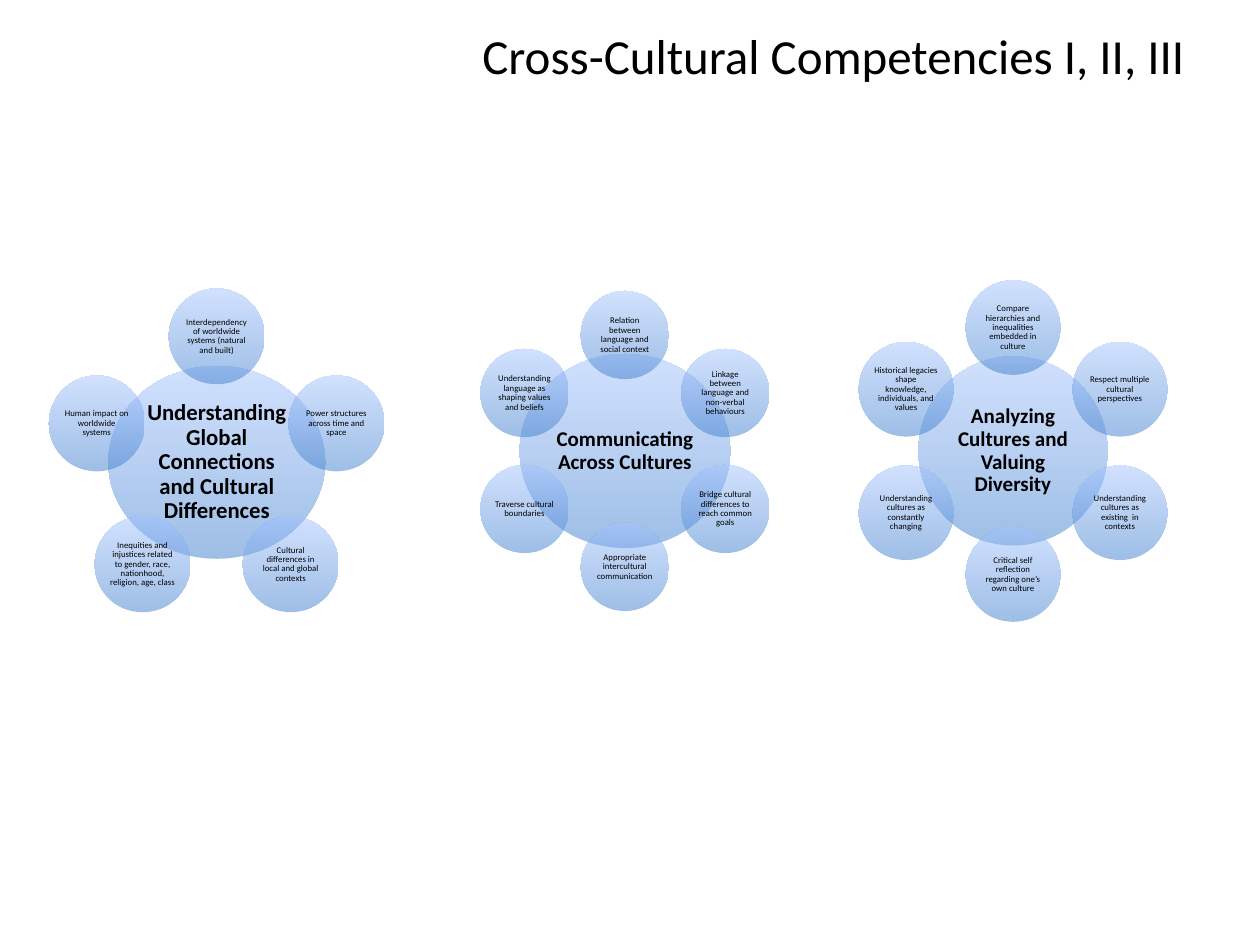
"""Build a slide of three radial clusters on cross-cultural skills."""
from dataclasses import dataclass
from math import cos, pi, sin

from lxml.etree import SubElement
from pptx import Presentation
from pptx.dml.color import RGBColor
from pptx.enum.shapes import MSO_SHAPE
from pptx.enum.text import MSO_ANCHOR, MSO_AUTO_SIZE, PP_ALIGN
from pptx.oxml.ns import qn
from pptx.util import Inches, Pt

COLORS = {"deep": "3F7FCE", "pale": "A4C4FF", "text": "000000"}
FONT = "Calibri"


@dataclass
class Wheel:
    x: float
    y: float
    width: float
    height: float
    reach: float
    size: float
    points: int
    core: str
    leaves: list[str]


WHEELS = [
    Wheel(1.72, 3.67, 1.72, 1.53, 1.0, 0.76, 13,
          "Understanding Global Connections and Cultural Differences",
          ["Interdependency of worldwide systems (natural and built)",
           "Power structures across time and space",
           "Cultural differences in local and global contexts",
           "Inequities and injustices related to gender, race, "
           "nationhood, religion, age, class",
           "Human impact on worldwide systems"]),
    Wheel(4.96, 3.58, 1.67, 1.54, 0.92, 0.7, 12,
          "Communicating Across Cultures",
          ["Relation between language and social context",
           "Linkage between language and non-verbal behaviours",
           "Bridge cultural differences to reach common goals",
           "Appropriate intercultural communication",
           "Traverse cultural boundaries",
           "Understanding language as shaping values and beliefs"]),
    Wheel(8.04, 3.58, 1.5, 1.5, 0.98, 0.75, 12,
          "Analyzing Cultures and Valuing Diversity",
          ["Compare hierarchies and inequalities embedded in culture",
           "Respect multiple cultural perspectives",
           "Understanding cultures as existing  in contexts",
           "Critical self reflection regarding one’s own culture",
           "Understanding cultures as constantly changing",
           "Historical legacies shape knowledge, individuals, and values"]),
]


def write(frame, text: str, points: int, align, bold: bool = False) -> None:
    para = frame.paragraphs[0]
    para.alignment = align
    run = para.add_run()
    run.text = text
    run.font.name = FONT
    run.font.size = Pt(points)
    run.font.bold = bold
    run.font.color.rgb = RGBColor.from_string(COLORS["text"])


def shade(shape) -> None:
    shape.shadow.inherit = False
    shape.line.fill.background()
    shape.fill.gradient()
    shape.fill.gradient_angle = 90
    for stop, name, place in zip(shape.fill.gradient_stops, ("deep", "pale"), (0, 1)):
        stop.color.rgb = RGBColor.from_string(COLORS[name])
        stop.position = place
    for color in shape._element.spPr.iter(qn("a:srgbClr")):
        SubElement(color, qn("a:alpha"), val="50000")


def draw_disc(group, x: float, y: float, width: float, height: float,
              text: str, points: int, inset: float, bold: bool = False) -> None:
    disc = group.shapes.add_shape(
        MSO_SHAPE.OVAL, Inches(x - width / 2), Inches(y - height / 2),
        Inches(width), Inches(height))
    shade(disc)
    frame = disc.text_frame
    frame.word_wrap = True
    frame.vertical_anchor = MSO_ANCHOR.MIDDLE
    frame.margin_left = frame.margin_right = Inches(inset)
    frame.margin_top = frame.margin_bottom = Inches(inset)
    write(frame, text, points, PP_ALIGN.CENTER, bold)
    frame.paragraphs[0].line_spacing = 0.9


def draw_wheel(slide, wheel: Wheel) -> None:
    group = slide.shapes.add_group_shape()
    draw_disc(group, wheel.x, wheel.y, wheel.width, wheel.height,
              wheel.core, wheel.points, 0.02, True)
    for index, leaf in enumerate(wheel.leaves):
        angle = 2 * pi * index / len(wheel.leaves)
        draw_disc(group, wheel.x + wheel.reach * sin(angle),
                  wheel.y - wheel.reach * cos(angle),
                  wheel.size, wheel.size, leaf, 5, 0.01)


def main() -> None:
    deck = Presentation()
    deck.slide_width, deck.slide_height = Inches(10), Inches(7.5)
    slide = deck.slides.add_slide(deck.slide_layouts[5])
    title = slide.shapes.title
    title.left, title.top = Inches(1.47), Inches(0)
    title.width, title.height = Inches(8.03), Inches(0.87)
    frame = title.text_frame
    frame.auto_size = MSO_AUTO_SIZE.NONE
    frame.vertical_anchor = MSO_ANCHOR.MIDDLE
    write(frame, "Cross-Cultural Competencies I, II, III", 28, PP_ALIGN.RIGHT)
    for wheel in WHEELS:
        draw_wheel(slide, wheel)
    deck.save("out.pptx")


if __name__ == "__main__":
    main()
